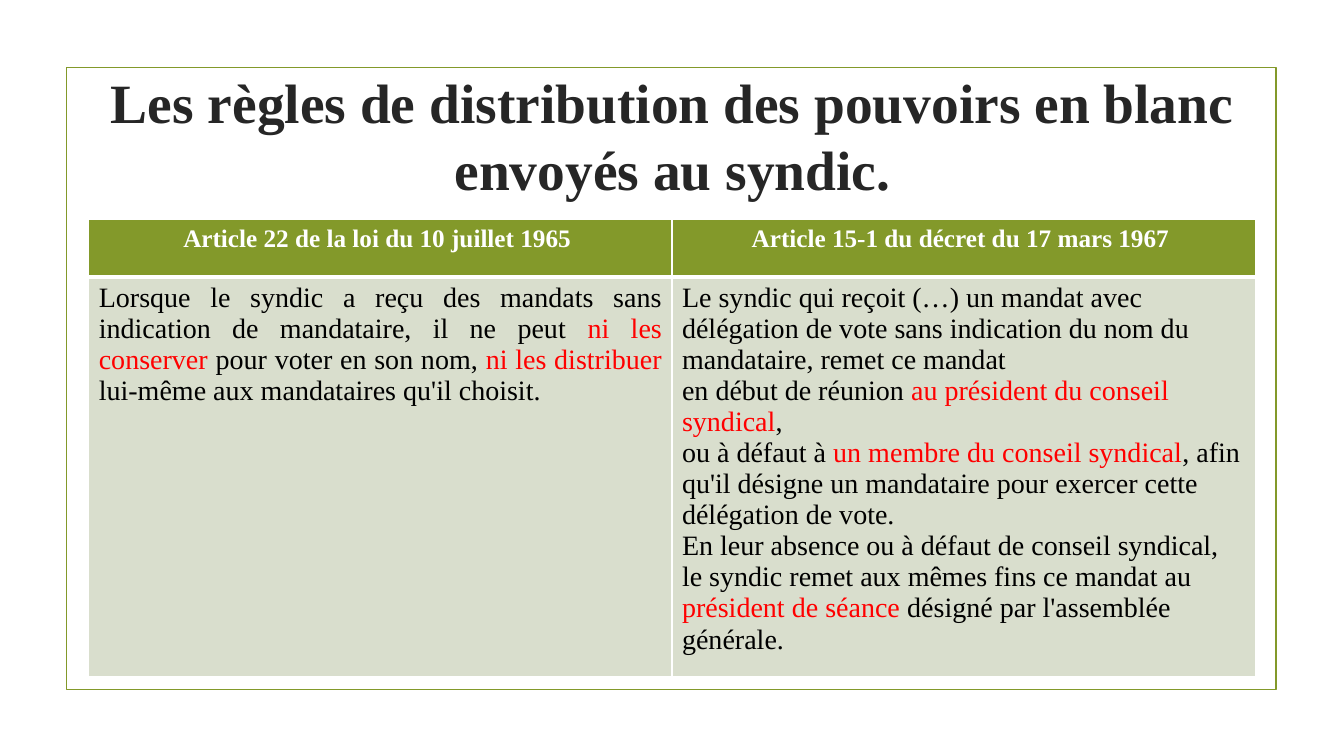
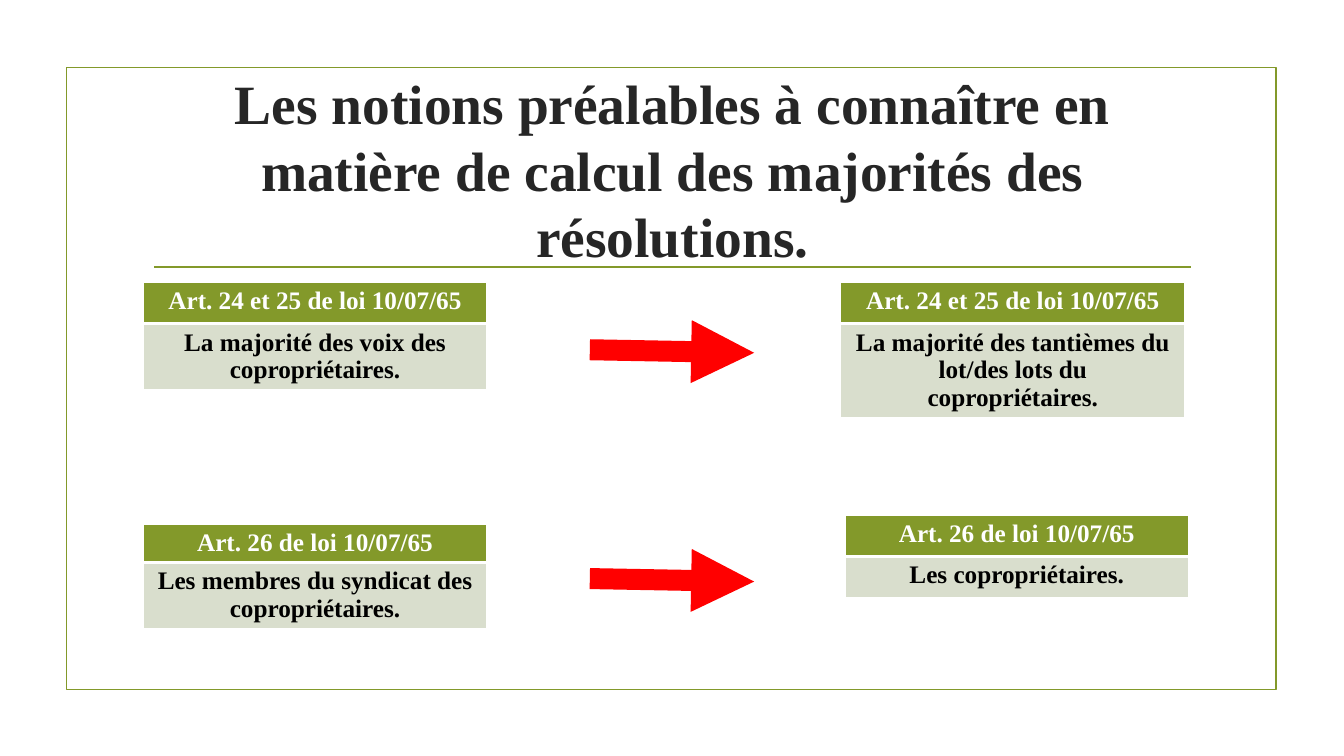
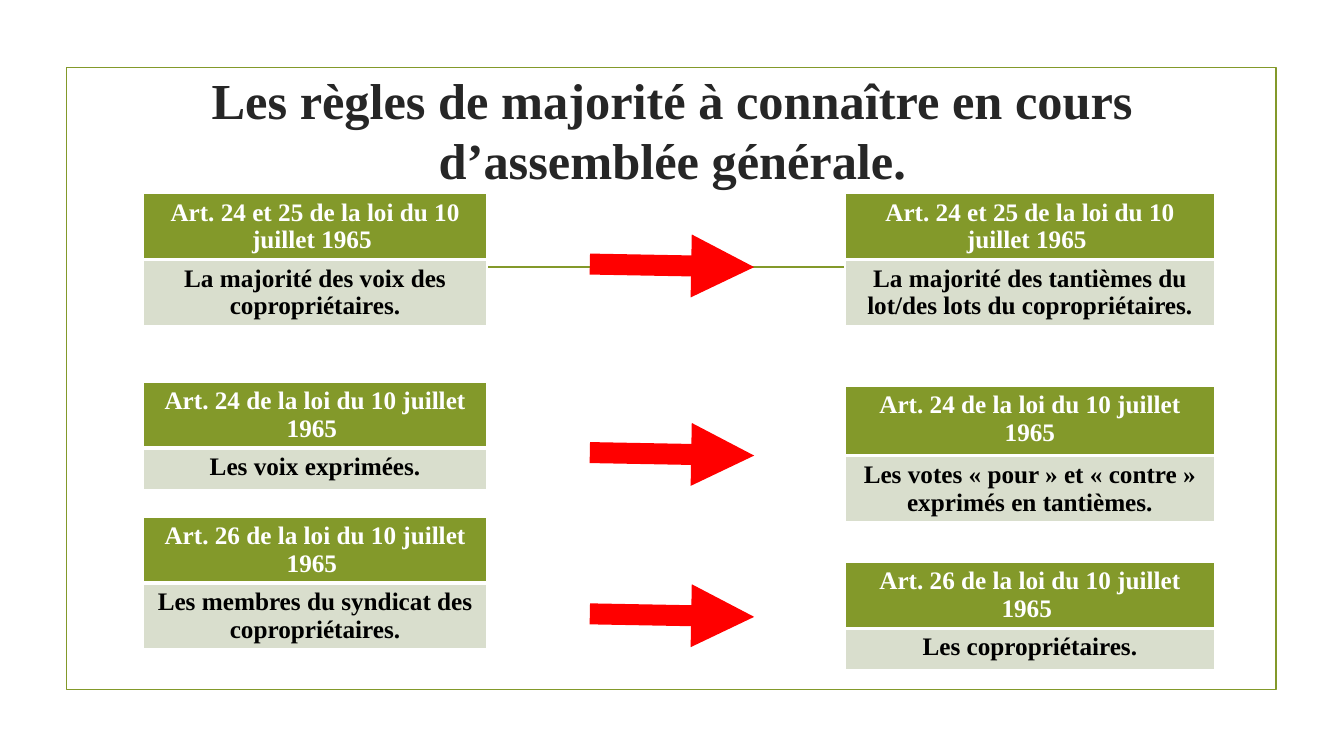
import dataclasses
import typing

import lxml.etree
import pptx
import pptx.dml.color
import pptx.enum.shapes
import pptx.enum.text
import pptx.oxml.ns
import pptx.util

# Shared look
PX = 9144  # 100 px to the inch
FONT = "Times New Roman"
GREEN, PALE, WHITE = "83992A", "D9DECD", "FFFFFF"
INK, BLACK, RED = "262626", "000000", "FF0000"
ALIGN = pptx.enum.text.PP_ALIGN
LEFT_X, LEFT_WIDTH = 142, 341
ARROW_X, ARROW_LENGTH, ARROW_DROP = 585, 163, 3


@dataclasses.dataclass
class Span:
    text: str
    color: str = BLACK


Para = list[Span]


@dataclasses.dataclass
class Box:
    x: int
    y: int
    width: int
    height: int


@dataclasses.dataclass
class Card:
    x: int
    y: int
    width: int
    heading: str
    body: str
    heading_height: int = 41


TITLE_BOX = Box(142, 96, 1050, 143)


def px(length: int) -> pptx.util.Emu:
    return pptx.util.Emu(length * PX)


def rgb(color: str) -> pptx.dml.color.RGBColor:
    return pptx.dml.color.RGBColor.from_string(color)


def write_text(frame: typing.Any, paras: list[Para], *, size: float = 18, bold: bool = True,
               align: typing.Any = ALIGN.CENTER) -> None:
    frame.word_wrap = True
    for index, spans in enumerate(paras):
        para = frame.paragraphs[0] if index == 0 else frame.add_paragraph()
        para.alignment = align
        for span in spans:
            run = para.add_run()
            run.text = span.text
            run.font.name = FONT
            run.font.size = pptx.util.Pt(size)
            run.font.bold = bold
            run.font.color.rgb = rgb(span.color)


# Lines and frame
def add_line(slide: typing.Any, start: tuple[int, int], end: tuple[int, int],
             color: str, width: float, arrow: bool = False) -> typing.Any:
    line = slide.shapes.add_connector(
        pptx.enum.shapes.MSO_CONNECTOR.STRAIGHT, px(start[0]), px(start[1]), px(end[0]), px(end[1]))
    line.line.color.rgb = rgb(color)
    line.line.width = pptx.util.Pt(width)
    properties = line.element.spPr
    if arrow:
        outline = properties.find(pptx.oxml.ns.qn("a:ln"))
        lxml.etree.SubElement(outline, pptx.oxml.ns.qn("a:tailEnd"), type="triangle")
    lxml.etree.SubElement(properties, pptx.oxml.ns.qn("a:effectLst"))
    return line


def add_arrow(slide: typing.Any, y: int) -> None:
    add_line(slide, (ARROW_X, y), (ARROW_X + ARROW_LENGTH, y + ARROW_DROP), RED, 15, arrow=True)


def decorate_layout(slide: typing.Any) -> None:
    """Draw the frame and rule once, then move them to the shared layout."""
    frame = slide.shapes.add_shape(
        pptx.enum.shapes.MSO_SHAPE.RECTANGLE, px(66), px(67), px(1200), px(617))
    frame.shadow.inherit = False
    frame.fill.background()
    frame.line.color.rgb = rgb(GREEN)
    frame.line.width = pptx.util.Pt(1.25)
    rule = add_line(slide, (153, 265), (1181, 265), GREEN, 1.25)
    for shape in (frame, rule):
        slide.slide_layout.shapes.element.append(shape.element)


# Titles
def add_slide(deck: typing.Any, title: str, box: Box = TITLE_BOX, size: float = 39.6) -> typing.Any:
    slide = deck.slides.add_slide(deck.slide_layouts[5])
    holder = slide.shapes.title
    holder.left, holder.top = px(box.x), px(box.y)
    holder.width, holder.height = px(box.width), px(box.height)
    holder.text_frame.auto_size = pptx.enum.text.MSO_AUTO_SIZE.NONE
    holder.text_frame.vertical_anchor = pptx.enum.text.MSO_ANCHOR.MIDDLE
    write_text(holder.text_frame, [[Span(title, INK)]], size=size)
    return slide


# Tables
def style_cell(cell: typing.Any, fill: str, top: float, bottom: float) -> None:
    cell.fill.solid()
    cell.fill.fore_color.rgb = rgb(fill)
    properties = cell._tc.get_or_add_tcPr()
    for index, (side, width) in enumerate((("L", 1), ("R", 1), ("T", top), ("B", bottom))):
        border = lxml.etree.Element(
            pptx.oxml.ns.qn(f"a:ln{side}"), w=str(int(pptx.util.Pt(width))))
        solid = lxml.etree.SubElement(border, pptx.oxml.ns.qn("a:solidFill"))
        lxml.etree.SubElement(solid, pptx.oxml.ns.qn("a:srgbClr"), val=WHITE)
        properties.insert(index, border)


def add_table(slide: typing.Any, box: Box, headings: list[str], heading_height: int) -> typing.Any:
    """Add a heading row and an empty body row."""
    table = slide.shapes.add_table(
        2, len(headings), px(box.x), px(box.y), px(box.width), px(box.height)).table
    table.horz_banding = False
    table.rows[0].height = px(heading_height)
    table.rows[1].height = px(box.height - heading_height)
    for column, heading in enumerate(headings):
        style_cell(table.cell(0, column), GREEN, 1, 3)
        style_cell(table.cell(1, column), PALE, 3, 1)
        write_text(table.cell(0, column).text_frame, [[Span(heading, WHITE)]])
    return table


def add_card(slide: typing.Any, card: Card) -> None:
    box = Box(card.x, card.y, card.width, card.heading_height + 41)
    table = add_table(slide, box, [card.heading], card.heading_height)
    write_text(table.cell(1, 0).text_frame, [[Span(card.body)]])


# Slides
def build_blank_proxies(deck: typing.Any) -> None:
    slide = add_slide(deck, "Les règles de distribution des pouvoirs en blanc envoyés au syndic.",
                      Box(81, 78, 1172, 112))
    decorate_layout(slide)
    table = add_table(slide, Box(88, 218, 1157, 453),
                      ["Article 22 de la loi du 10 juillet 1965 ",
                       "Article 15-1 du décret du 17 mars 1967 "], 57)
    law = [[
        Span("Lorsque le syndic a reçu des mandats sans indication de mandataire, il ne peut "),
        Span("ni les conserver ", RED),
        Span("pour voter en son nom, "),
        Span("ni les distribuer ", RED),
        Span("lui-même aux mandataires qu'il choisit."),
    ]]
    decree = [
        [Span("Le syndic qui reçoit (…) un mandat avec délégation de vote sans indication "
              "du nom du mandataire, remet ce mandat")],
        [Span("en début de réunion "), Span("au président du conseil syndical", RED), Span(",")],
        [Span("ou à défaut à "), Span("un membre du conseil syndical", RED),
         Span(", afin qu'il désigne un mandataire pour exercer cette délégation de vote.")],
        [Span("En leur absence ou à défaut de conseil syndical, le syndic remet aux mêmes fins "
              "ce mandat au "), Span("président de séance", RED),
         Span(" désigné par l'assemblée générale.")],
    ]
    for column, (paras, align) in enumerate(((law, ALIGN.JUSTIFY), (decree, ALIGN.LEFT))):
        write_text(table.cell(1, column).text_frame, paras, size=20, bold=False, align=align)


def build_comparison(slide: typing.Any, cards: list[Card], arrows: list[int]) -> None:
    for card in cards:
        add_card(slide, card)
    for y in arrows:
        add_arrow(slide, y)


VOICES = "La majorité des voix des copropriétaires."
SHARES = "La majorité des tantièmes du lot/des lots du copropriétaires."
MEMBERS = "Les membres du syndicat des copropriétaires."
OWNERS = "Les copropriétaires."


def build_notions(deck: typing.Any) -> None:
    slide = add_slide(deck, "Les notions préalables à connaître en matière de calcul "
                            "des majorités des résolutions.")
    majority, unanimity = "Art. 24 et 25 de loi 10/07/65", "Art. 26 de loi 10/07/65"
    build_comparison(slide, [
        Card(LEFT_X, 280, LEFT_WIDTH, majority, VOICES),
        Card(LEFT_X, 520, LEFT_WIDTH, unanimity, MEMBERS, 38),
        Card(834, 280, LEFT_WIDTH, majority, SHARES),
        Card(838, 511, LEFT_WIDTH, unanimity, OWNERS),
    ], [347, 574])


def build_majorities(deck: typing.Any) -> None:
    slide = add_slide(deck, "Les règles de majorité à connaître en cours d’assemblée générale.",
                      Box(142, 57, 1050, 143), 36)
    both = "Art. 24 et 25 de la loi du 10 juillet 1965 "
    simple = "Art. 24 de la loi du 10 juillet 1965"
    double = "Art. 26 de la loi du 10 juillet 1965 "
    right_x, right_width = 838, 367
    build_comparison(slide, [
        Card(LEFT_X, 192, LEFT_WIDTH, both, VOICES),
        Card(LEFT_X, 379, LEFT_WIDTH, simple + " ", "Les voix exprimées."),
        Card(LEFT_X, 513, LEFT_WIDTH, double, MEMBERS),
        Card(right_x, 192, right_width, both, SHARES),
        Card(right_x, 383, right_width, simple,
             "Les votes « pour » et « contre » exprimés en tantièmes.", 69),
        Card(right_x, 558, right_width, double, OWNERS),
    ], [262, 449, 609])


def main() -> None:
    deck = pptx.Presentation()
    deck.slide_width, deck.slide_height = px(1333), px(750)
    build_blank_proxies(deck)
    build_notions(deck)
    build_majorities(deck)
    deck.save("out.pptx")


if __name__ == "__main__":
    main()
